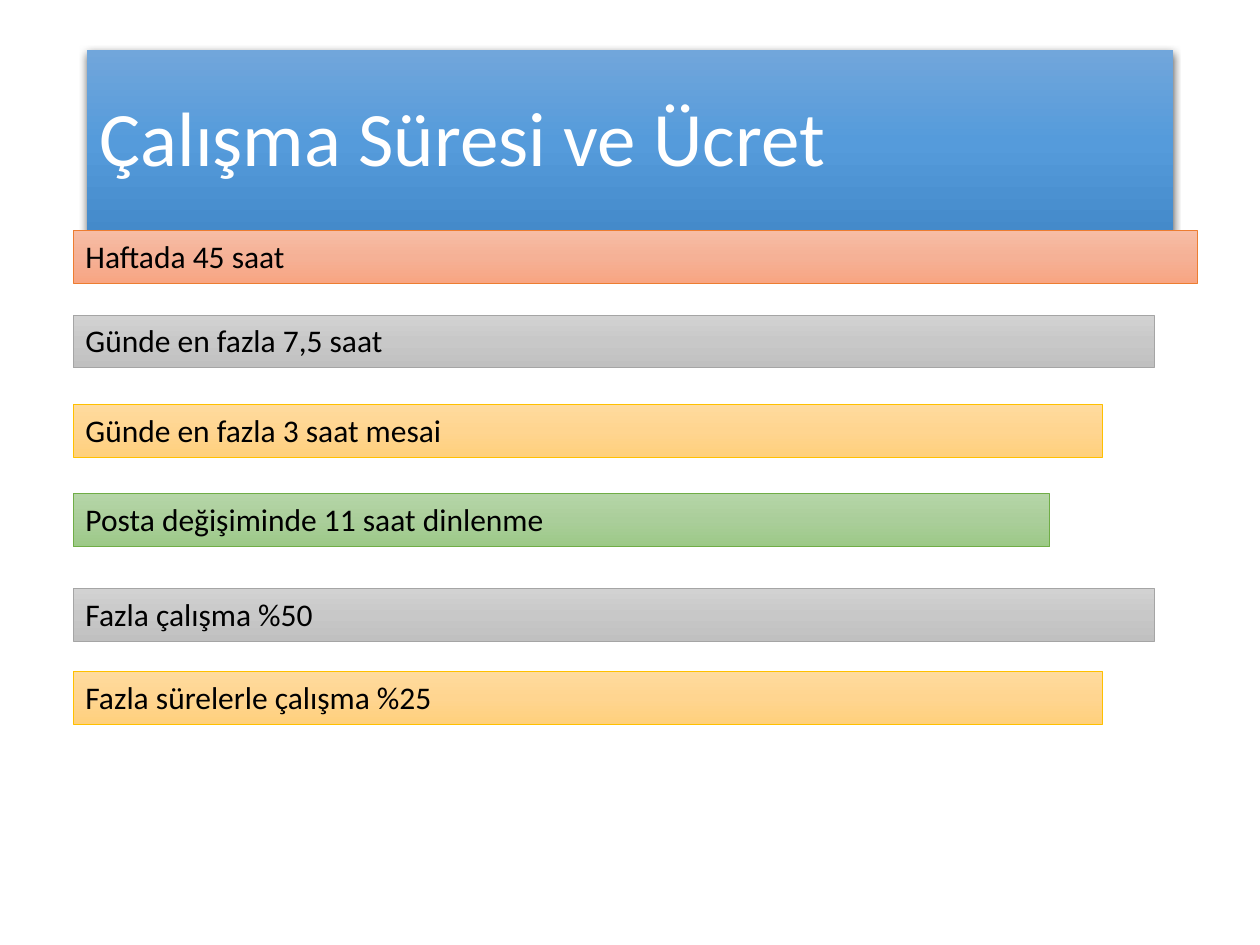
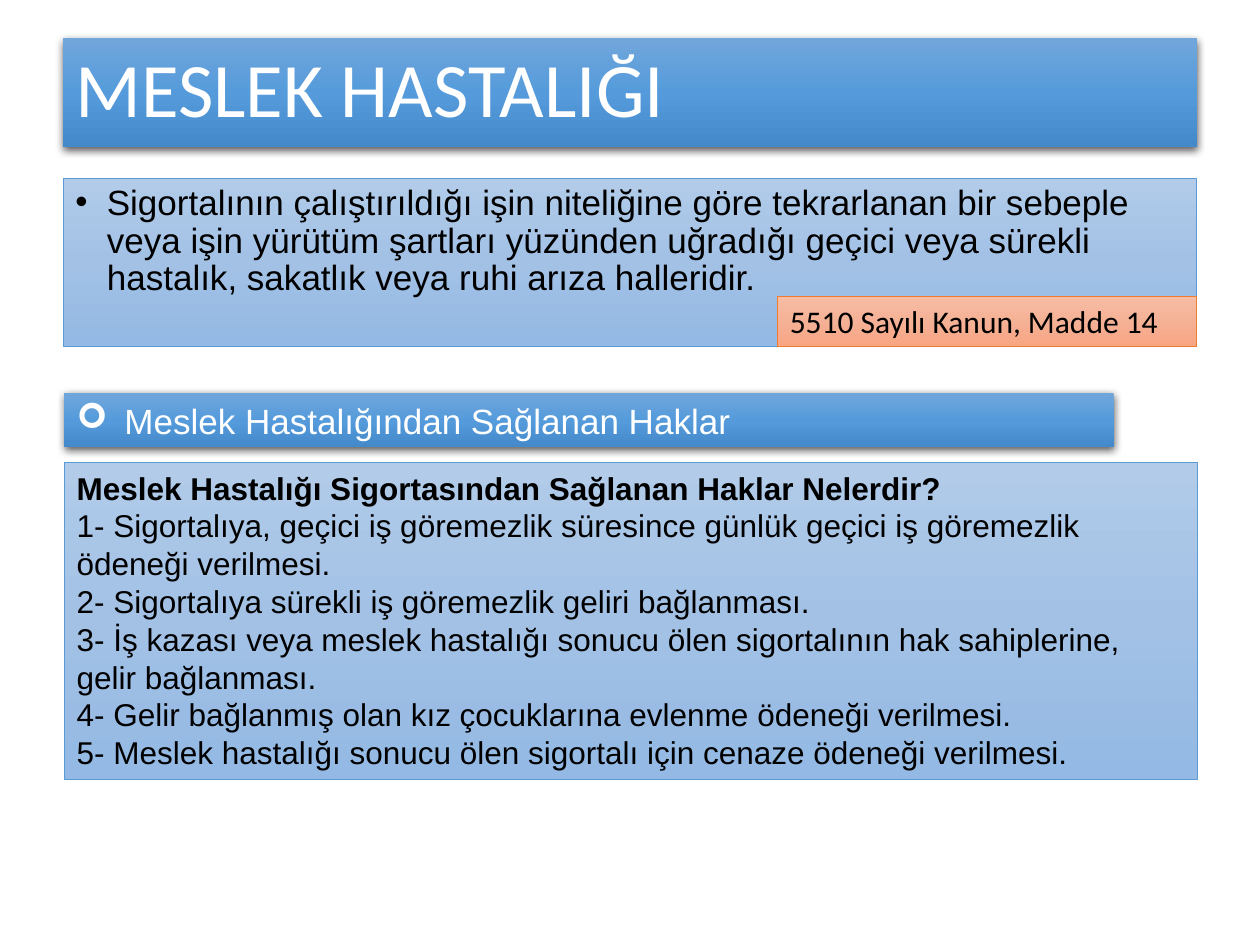
import copy

import pptx
import pptx.dml.color
import pptx.enum.shapes
import pptx.enum.text
import pptx.oxml
import pptx.oxml.ns
import pptx.util
from pptx.util import Inches

SANS, ARIAL = "Calibri", "Arial"
BLACK, WHITE = "000000", "FFFFFF"

# Three gradient stops from top to bottom, then the outline (None: shadow)
STRONG = ("71A6DB", "559BDB", "448ACA", None)
BLUE = ("B1CBE9", "A3C1E5", "93B9E4", "5B9BD5")
ORANGE = ("F7BDA5", "F5B196", "F8A582", "ED7D31")
GRAY = ("D2D2D2", "C8C8C8", "C0C0C0", "A5A5A5")
GOLD = ("FFDB9E", "FFD590", "FFD07C", "FFC000")
GREEN = ("B5D5A7", "AACE9A", "9CC987", "70AD47")

SHADOW = (
    '<a:outerShdw %s blurRad="57150" dist="19050" dir="5400000" '
    'algn="ctr" rotWithShape="0"><a:srgbClr val="000000">'
    '<a:alpha val="63000"/></a:srgbClr></a:outerShdw>'
    % pptx.oxml.ns.nsdecls("a")
)


def rgb(code):
    return pptx.dml.color.RGBColor.from_string(code)


def paint(shape, style):
    """Give a shape its vertical gradient and its outline or shadow."""
    *stops, edge = style
    props = shape.element.spPr
    shape.fill.gradient()
    shape.fill.gradient_angle = 270
    marks = props.find(".//" + pptx.oxml.ns.qn("a:gsLst"))
    marks.append(copy.deepcopy(marks[-1]))
    for i, (stop, code) in enumerate(zip(shape.fill.gradient_stops, stops)):
        stop.color.rgb = rgb(code)
        stop.position = i / 2
    if edge:
        shape.line.color.rgb = rgb(edge)
        shape.line.width = pptx.util.Pt(0.5)
    else:
        shape.line.fill.background()
    shape.shadow.inherit = False
    if not edge:
        effects = props.find(pptx.oxml.ns.qn("a:effectLst"))
        effects.append(pptx.oxml.parse_xml(SHADOW))


def bullet(para, mark, font, indent):
    props = para._p.get_or_add_pPr()
    props.set("marL", str(Inches(indent)))
    props.set("indent", str(-Inches(indent)))
    for tag, key, value in (("buFont", "typeface", font),
                            ("buChar", "char", mark)):
        node = pptx.oxml.parse_xml(
            "<a:%s %s/>" % (tag, pptx.oxml.ns.nsdecls("a")))
        node.set(key, value)
        props.append(node)


def write(shape, *lines, size=18, font=SANS, color=BLACK, middle=False,
          lead=None, mark=None, indent=0, sign=ARIAL, head=False):
    """Fill a shape with paragraphs; head makes the first one bold."""
    frame = shape.text_frame
    frame.word_wrap = True
    frame.auto_size = pptx.enum.text.MSO_AUTO_SIZE.NONE
    anchor = pptx.enum.text.MSO_ANCHOR
    frame.vertical_anchor = anchor.MIDDLE if middle else anchor.TOP
    for i, line in enumerate(lines):
        para = frame.add_paragraph() if i else frame.paragraphs[0]
        if mark:
            bullet(para, mark, sign, indent)
        para.alignment = pptx.enum.text.PP_ALIGN.LEFT
        para.line_spacing = lead
        run = para.add_run()
        run.text = line
        run.font.name = font
        run.font.size = pptx.util.Pt(size)
        run.font.color.rgb = rgb(color)
        run.font.bold = head and i == 0


def panel(slide, box, style, *lines, **form):
    shape = slide.shapes.add_shape(
        pptx.enum.shapes.MSO_SHAPE.RECTANGLE, *map(Inches, box))
    paint(shape, style)
    write(shape, *lines, **form)


def titled(deck, box, text):
    """Add a title-only slide with its title on a blue band."""
    slide = deck.slides.add_slide(deck.slide_layouts[5])
    title = slide.shapes.title
    title.left, title.top, title.width, title.height = map(Inches, box)
    paint(title, STRONG)
    write(title, text, size=44, color=WHITE, middle=True, lead=0.9)
    return slide


def bars(slide, left, top, rows):
    """Stack the bars; each row has its offset, width, style and text."""
    for drop, width, style, text in rows:
        panel(slide, (left, top + drop, width, 0.42), style, text)


def hours(deck):
    slide = titled(deck, (0.69, 0.4, 8.62, 1.45), "Çalışma Süresi ve Ücret")
    bars(slide, 0.58, 1.83, (
        (0, 8.92, ORANGE, "Haftada 45 saat"),
        (0.67, 8.58, GRAY, "Günde en fazla 7,5 saat"),
        (1.38, 8.17, GOLD, "Günde en fazla 3 saat mesai"),
        (2.09, 7.75, GREEN, "Posta değişiminde 11 saat dinlenme"),
        (2.84, 8.58, GRAY, "Fazla çalışma %50"),
        (3.5, 8.17, GOLD, "Fazla sürelerle çalışma %25"),
    ))


def meaning(slide, left, top, width, height):
    """Place the definition with its source in the lower right corner."""
    panel(slide, (left, top, width, height), BLUE,
          "Sigortalının çalıştırıldığı işin niteliğine göre tekrarlanan bir "
          "sebeple veya işin yürütüm şartları yüzünden uğradığı geçici veya "
          "sürekli hastalık, sakatlık veya ruhi arıza halleridir.",
          size=20, font=ARIAL, lead=0.9, mark="•", indent=0.25)
    wide, high = 3.33, 0.4
    panel(slide, (left + width - wide, top + height - high, wide, high),
          ORANGE, "5510 Sayılı Kanun, Madde 14")


def rights(slide, left, top, width, height):
    """Place the heading band and the list of rights below it."""
    drop = 0.55
    panel(slide, (left, top, 8.33, 0.43), STRONG,
          "Meslek Hastalığından Sağlanan Haklar",
          size=20, font=ARIAL, color=WHITE, middle=True,
          mark="➢", indent=0.38, sign="Wingdings")
    panel(slide, (left, top + drop, width, height - drop), BLUE,
          "Meslek Hastalığı Sigortasından Sağlanan Haklar Nelerdir?",
          "1- Sigortalıya, geçici iş göremezlik süresince günlük geçici iş "
          "göremezlik ödeneği verilmesi.",
          "2- Sigortalıya sürekli iş göremezlik geliri bağlanması.",
          "3- İş kazası veya meslek hastalığı sonucu ölen sigortalının hak "
          "sahiplerine, gelir bağlanması.",
          "4- Gelir bağlanmış olan kız çocuklarına evlenme ödeneği verilmesi.",
          "5- Meslek hastalığı sonucu ölen sigortalı için cenaze ödeneği "
          "verilmesi.",
          font=ARIAL, head=True)


def illness(deck):
    slide = titled(deck, (0.5, 0.3, 9, 0.87), "MESLEK HASTALIĞI")
    meaning(slide, 0.5, 1.42, 9, 1.33)
    rights(slide, 0.51, 3.12, 8.99, 3.07)


def main():
    deck = pptx.Presentation()
    deck.slide_width, deck.slide_height = Inches(10), Inches(7.5)
    hours(deck)
    illness(deck)
    deck.save("out.pptx")


if __name__ == "__main__":
    main()
